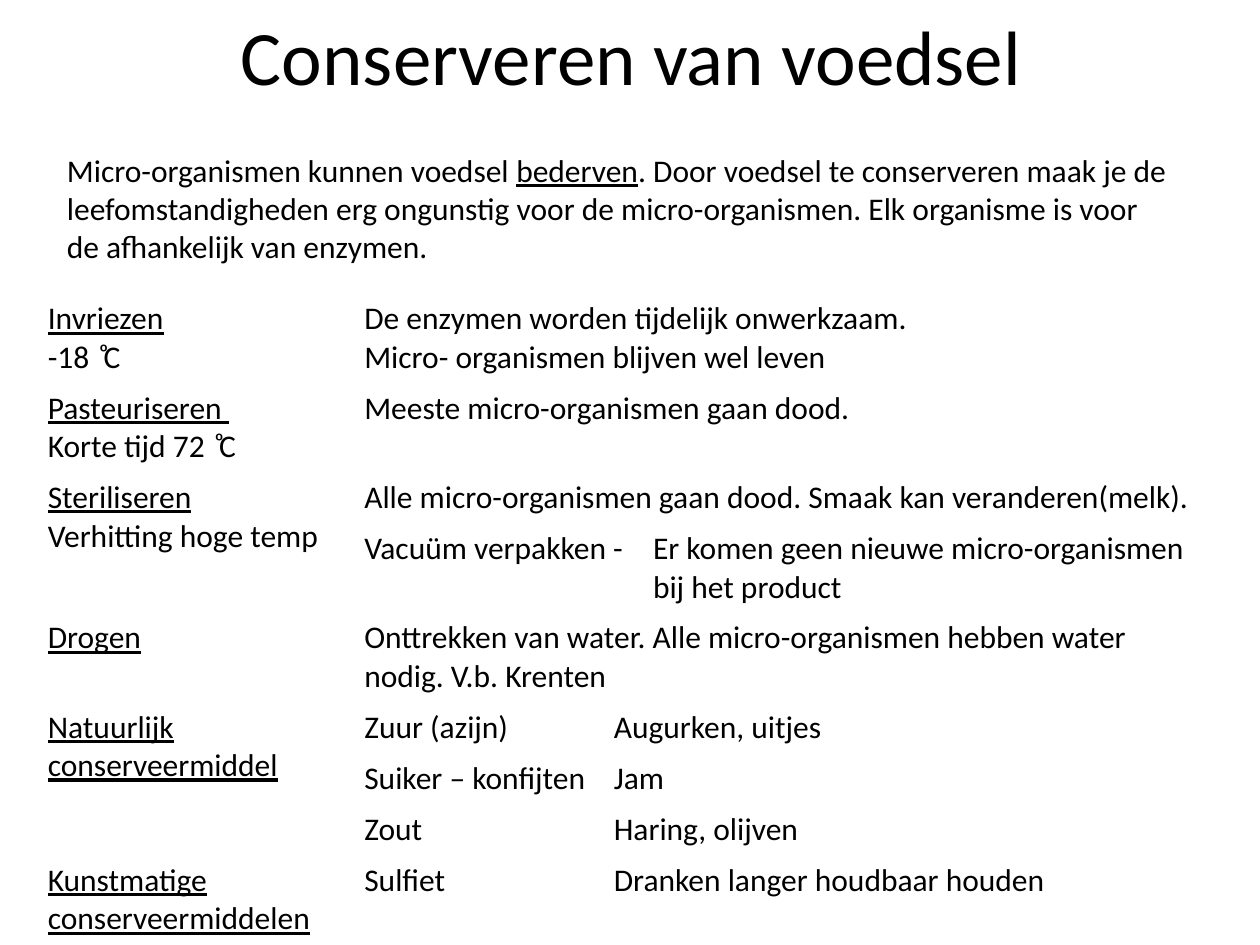
import pptx
import pptx.dml.color
import pptx.enum.text
import pptx.util

Cm = pptx.util.Cm


def color(hex_string):
    return pptx.dml.color.RGBColor.from_string(hex_string)


def add_text(paragraph, text, size=18, underline=False, font="Calibri", fill="000000"):
    run = paragraph.add_run()
    run.text = text
    run.font.name = font
    run.font.size = pptx.util.Pt(size)
    run.font.underline = underline
    run.font.color.rgb = color(fill)


presentation = pptx.Presentation()
presentation.slide_width = Cm(25.4)
presentation.slide_height = Cm(19.05)
slide = presentation.slides.add_slide(presentation.slide_layouts[5])

title = slide.shapes.title
title.left, title.top, title.width, title.height = Cm(1.3), Cm(-0.48), Cm(22.86), Cm(3.18)
title.text_frame.vertical_anchor = pptx.enum.text.MSO_ANCHOR.MIDDLE
title_paragraph = title.text_frame.paragraphs[0]
title_paragraph.alignment = pptx.enum.text.PP_ALIGN.CENTER
add_text(title_paragraph, "Conserveren van voedsel", size=44)

introduction = slide.shapes.add_textbox(Cm(1.1), Cm(2.92), Cm(22.86), Cm(2.7))
introduction.text_frame.word_wrap = True
introduction_paragraph = introduction.text_frame.paragraphs[0]
add_text(introduction_paragraph, "Micro-organismen kunnen voedsel ")
add_text(introduction_paragraph, "bederven", underline=True)
add_text(
    introduction_paragraph,
    ". Door voedsel te conserveren maak je de leefomstandigheden erg ongunstig "
    "voor de micro-organismen. Elk organisme is voor de afhankelijk van enzymen.",
)

column_widths = [6.38, 5.03, 0.79, 11.6]
single_line, double_line = 1.03, 1.8
row_heights = [double_line, double_line, single_line, double_line, double_line,
               single_line, single_line, single_line, double_line]

methods = [
    (0, 1, ["Invriezen", "-18  ͦC"]),
    (1, 1, ["Pasteuriseren ", "Korte tijd 72  ͦC"]),
    (2, 2, ["Steriliseren", "Verhitting hoge temp"]),
    (4, 1, ["Drogen"]),
    (5, 3, ["Natuurlijk conserveermiddel"]),
    (8, 1, ["Kunstmatige conserveermiddelen"]),
]
effects = [
    (0, 1, 3, ["De enzymen worden tijdelijk onwerkzaam.", "Micro- organismen blijven wel leven"]),
    (1, 1, 3, ["Meeste micro-organismen gaan dood."]),
    (2, 1, 3, ["Alle micro-organismen gaan dood. Smaak kan veranderen(melk)."]),
    (3, 1, 2, ["Vacuüm verpakken -"]),
    (3, 3, 1, ["Er komen geen nieuwe micro-organismen bij het product"]),
    (4, 1, 3, ["Onttrekken van water. Alle micro-organismen hebben water nodig. V.b. Krenten"]),
]
preservatives = [
    ("Zuur (azijn)", "Augurken, uitjes"),
    ("Suiker – konfijten", "Jam"),
    ("Zout", "Haring, olijven"),
    ("Sulfiet", "Dranken langer houdbaar houden"),
]
for row, (preservative, example) in enumerate(preservatives, start=5):
    effects += [(row, 1, 1, [preservative]), (row, 2, 2, [example])]

entries = [(row, 0, row_span, 1, lines) for row, row_span, lines in methods]
entries += [(row, column, 1, column_span, lines) for row, column, column_span, lines in effects]

table = slide.shapes.add_table(
    len(row_heights), len(column_widths), Cm(0.71), Cm(5.92),
    Cm(sum(column_widths)), Cm(sum(row_heights)),
).table
table.first_row = False
table.horz_banding = False
for column, width in zip(table.columns, column_widths):
    column.width = Cm(width)
for row, height in zip(table.rows, row_heights):
    row.height = Cm(height)
for cell in table.iter_cells():
    cell.fill.background()

for row, column, row_span, column_span, lines in entries:
    cell = table.cell(row, column)
    if row_span * column_span > 1:
        cell.merge(table.cell(row + row_span - 1, column + column_span - 1))
    for index, line in enumerate(lines):
        paragraph = cell.text_frame.add_paragraph() if index else cell.text_frame.paragraphs[0]
        add_text(paragraph, line, underline=column == 0 and index == 0)

presentation.save("out.pptx")
